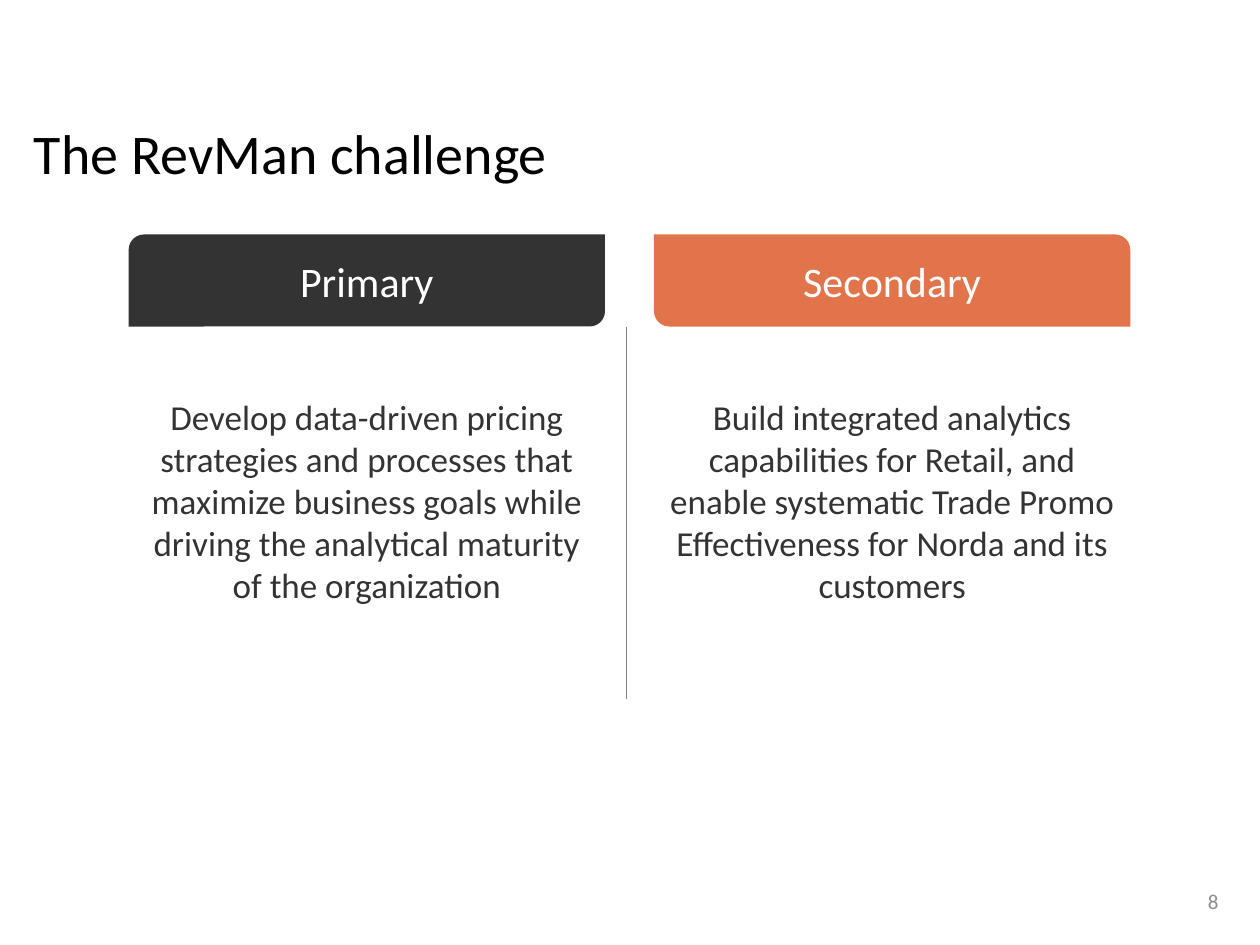
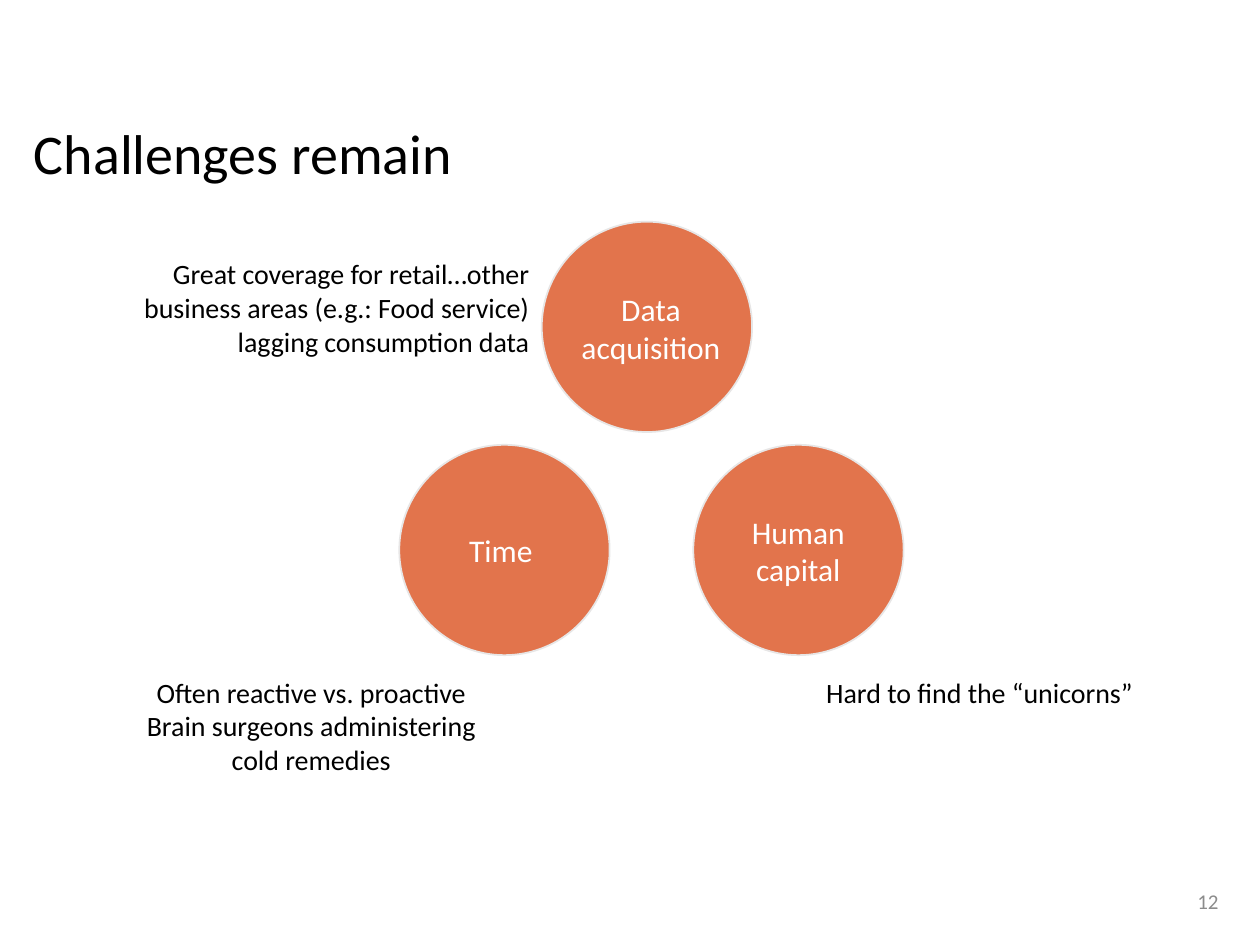
import pptx
import pptx.dml.color
import pptx.enum.shapes
import pptx.enum.text
import pptx.oxml.ns
import pptx.util
from lxml import etree

Pt = pptx.util.Pt
RGBColor = pptx.dml.color.RGBColor
SHAPE = pptx.enum.shapes.MSO_SHAPE
ALIGN = pptx.enum.text.PP_ALIGN
ANCHOR = pptx.enum.text.MSO_ANCHOR
AUTO = pptx.enum.text.MSO_AUTO_SIZE

BLACK = RGBColor(0x00, 0x00, 0x00)
WHITE = RGBColor(0xFF, 0xFF, 0xFF)
CHARCOAL = RGBColor(0x33, 0x33, 0x33)
ORANGE = RGBColor(0xE2, 0x74, 0x4C)
RULE_GREY = RGBColor(0x80, 0x80, 0x80)
NUMBER_GREY = RGBColor(0x8C, 0x8C, 0x8C)
PALE_GREY = RGBColor(0xE7, 0xE6, 0xE6)


class Deck:
    font = "Calibri"

    def __init__(self):
        self.prs = pptx.Presentation()
        self.prs.slide_width, self.prs.slide_height = Pt(720), Pt(540)
        self.slide = None

    def fill_text(self, tf, paragraphs, size, color, align, anchor=ANCHOR.TOP):
        tf.word_wrap = True
        tf.vertical_anchor = anchor
        for i, text in enumerate(paragraphs):
            p = tf.add_paragraph() if i else tf.paragraphs[0]
            p.alignment = align
            r = p.add_run()
            r.text = text
            r.font.name = self.font
            r.font.size = Pt(size)
            r.font.color.rgb = color

    def new_slide(self, title, number):
        self.slide = self.prs.slides.add_slide(self.prs.slide_layouts[5])
        sp = self.slide.shapes.title
        sp.left, sp.top, sp.width, sp.height = Pt(12.2), Pt(62), Pt(691.2), Pt(54.7)
        tf = sp.text_frame
        tf.auto_size = AUTO.NONE
        self.fill_text(tf, [title], 32, BLACK, ALIGN.LEFT, ANCHOR.MIDDLE)
        tf.paragraphs[0].line_spacing = 0.9
        self.text(541.4, 500.4, 162, 28.8, [str(number)], 12, NUMBER_GREY,
                  ALIGN.RIGHT, ANCHOR.MIDDLE)

    def text(self, x, y, w, h, paragraphs, size, color=BLACK,
             align=ALIGN.CENTER, anchor=ANCHOR.TOP):
        sp = self.slide.shapes.add_textbox(Pt(x), Pt(y), Pt(w), Pt(h))
        self.fill_text(sp.text_frame, paragraphs, size, color, align, anchor)

    def shape(self, kind, x, y, w, h, fill, line=None):
        sp = self.slide.shapes.add_shape(kind, Pt(x), Pt(y), Pt(w), Pt(h))
        sp.shadow.inherit = False
        sp.fill.solid()
        sp.fill.fore_color.rgb = fill
        if line is None:
            sp.line.fill.background()
        else:
            sp.line.color.rgb = line
            sp.line.width = Pt(1)
        return sp

    def header(self, x, y, w, h, label, fill, corners):
        sp = self.shape(SHAPE.ROUND_2_DIAG_RECTANGLE, x, y, w, h, fill)
        sp.adjustments[0], sp.adjustments[1] = corners
        self.fill_text(sp.text_frame, [label], 24, WHITE, ALIGN.CENTER, ANCHOR.MIDDLE)

    def rule(self, x, top, bottom):
        line = self.slide.shapes.add_connector(
            pptx.enum.shapes.MSO_CONNECTOR.STRAIGHT, Pt(x), Pt(top), Pt(x), Pt(bottom))
        line.line.color.rgb = RULE_GREY
        line.line.width = Pt(0.25)
        etree.SubElement(line._element.spPr, pptx.oxml.ns.qn("a:effectLst"))


def challenge_slide(deck):
    deck.new_slide("The RevMan challenge", 8)
    top, width, height = 134, 272.2, 52.6
    rounded = 0.1667
    columns = [
        (73.5, "Primary", CHARCOAL, (rounded, 0),
         "Develop data-driven pricing strategies and processes that maximize "
         "business goals while driving the analytical maturity of the organization"),
        (373.7, "Secondary", ORANGE, (0, rounded),
         "Build integrated analytics capabilities for Retail, and enable systematic "
         "Trade Promo Effectiveness for Norda and its customers"),
    ]
    for x, label, fill, corners, goal in columns:
        deck.header(x, top, width, height, label, fill, corners)
        deck.text(x, 222.5, width, 128.2, [goal], 20, CHARCOAL)
    deck.rule(358, top + height, 399.6)


def remaining_slide(deck):
    deck.new_slide("Challenges remain", 12)
    diameter, label_width = 120.2, 116
    upper, lower = 126.7, 254.2
    circles = [
        (228.2, lower, "Time", 228.2, 300.2, 28.8),
        (309.6, upper, "Data acquisition", 314, 162, 51),
        (396.2, lower, "Human capital", 398.2, 289.4, 51),
    ]
    for x, y, label, label_x, label_y, label_h in circles:
        deck.shape(SHAPE.OVAL, x, y, diameter, diameter, ORANGE, PALE_GREY)
        deck.text(label_x, label_y, label_width, label_h, [label], 18, WHITE)

    deck.text(34.6, 143.3, 275, 65.5,
              ["Great coverage for retail…other business areas (e.g.: Food service) "
               "lagging consumption data"], 16, align=ALIGN.RIGHT)
    notes_top = 382.3
    deck.text(69.5, notes_top, 216.7, 65.5,
              ["Often reactive vs. proactive",
               "Brain surgeons administering cold remedies"], 16)
    deck.text(456.5, notes_top, 206.6, 26.6, ["Hard to find the “unicorns”"], 16)


def main():
    deck = Deck()
    challenge_slide(deck)
    remaining_slide(deck)
    deck.prs.save("out.pptx")


if __name__ == "__main__":
    main()
